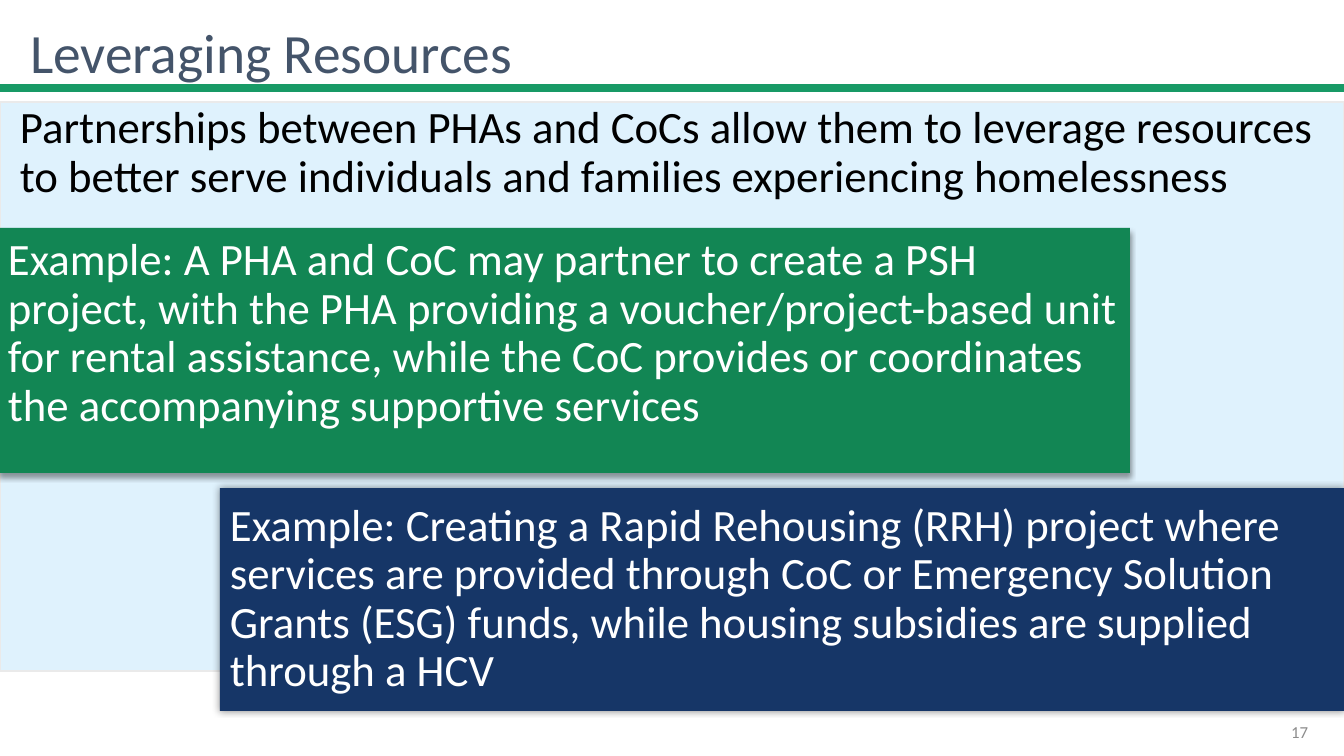
"""Builds the "Leveraging Resources" slide with two overlapping example panels."""
from lxml import etree
from pptx import Presentation
from pptx import util as u
from pptx.dml.color import RGBColor
from pptx.enum import shapes, text
from pptx.oxml.ns import qn

PX = 914400 / 100.8
FONT = "Calibri"
COLORS = {
    "rule": "189A66",
    "backdrop": "DFF2FD",
    "border": "EAEAEA",
    "green": "128654",
    "navy": "163667",
    "title": "44546A",
    "body": "000000",
    "white": "FFFFFF",
    "number": "8C8C8C",
}


def px(*lengths):
    return [u.Emu(round(length * PX)) for length in lengths]


def write(shape, words, size, color, anchor=text.MSO_ANCHOR.MIDDLE,
          align=text.PP_ALIGN.LEFT, spacing=0.9):
    frame = shape.text_frame
    frame.word_wrap = True
    frame.auto_size = text.MSO_AUTO_SIZE.NONE
    frame.vertical_anchor = anchor
    paragraph = frame.paragraphs[0]
    paragraph.alignment = align
    paragraph.line_spacing = spacing
    run = paragraph.add_run()
    run.text = words
    run.font.name = FONT
    run.font.size = u.Pt(size)
    run.font.color.rgb = RGBColor.from_string(COLORS[color])


presentation = Presentation()
presentation.slide_width, presentation.slide_height = px(1344, 756)
slide = presentation.slides.add_slide(presentation.slide_layouts[5])

rule = slide.shapes.add_connector(shapes.MSO_CONNECTOR.STRAIGHT, *px(0, 88, 1344, 88))
rule.line.color.rgb = RGBColor.from_string(COLORS["rule"])
rule.line.width = u.Pt(6)
etree.SubElement(rule._element.spPr, qn("a:effectLst"))

backdrop = slide.shapes.add_shape(shapes.MSO_SHAPE.RECTANGLE, *px(0, 102, 1344, 569))
backdrop.shadow.inherit = False
backdrop.fill.solid()
backdrop.fill.fore_color.rgb = RGBColor.from_string(COLORS["backdrop"])
backdrop.line.color.rgb = RGBColor.from_string(COLORS["border"])
backdrop.line.width = u.Pt(1)

title = slide.shapes.title
title.left, title.top, title.width, title.height = px(20, 21, 983, 70)
write(title, "Leveraging Resources", 39.6, "title")

panels = [
    ("green", (-2, 228, 1132, 245), 38, (4, 3, 90),
     "Example: A PHA and CoC may partner to create a PSH project, with the PHA "
     "providing a voucher/project-based unit for rental assistance, while the CoC "
     "provides or coordinates the accompanying supportive services"),
    ("navy", (220, 488, 1125, 223), 5, (5, 0, 0),
     "Example: Creating a Rapid Rehousing (RRH) project where services are provided "
     "through CoC or Emergency Solution Grants (ESG) funds, while housing subsidies "
     "are supplied through a HCV"),
]
for color, box, bottom_margin, (blur, distance, angle), words in panels:
    panel = slide.shapes.add_shape(shapes.MSO_SHAPE.RECTANGLE, *px(*box))
    panel.fill.solid()
    panel.fill.fore_color.rgb = RGBColor.from_string(COLORS[color])
    panel.line.fill.background()
    panel.shadow.inherit = False
    effects = panel._element.spPr.find(qn("a:effectLst"))
    shadow = etree.SubElement(
        effects, qn("a:outerShdw"), blurRad=str(u.Pt(blur)), dist=str(u.Pt(distance)),
        dir=str(angle * 60000), rotWithShape="0")
    shade = etree.SubElement(shadow, qn("a:srgbClr"), val="000000")
    etree.SubElement(shade, qn("a:alpha"), val="40000")
    panel.text_frame.margin_bottom, = px(bottom_margin)
    write(panel, words, 32, color="white")

body = slide.shapes.add_textbox(*px(10, 100, 1325, 117))
write(body, "Partnerships between PHAs and CoCs allow them to leverage resources to better "
      "serve individuals and families experiencing homelessness",
      32, "body", anchor=text.MSO_ANCHOR.TOP)

number = slide.shapes.add_textbox(*px(1016, 712, 302, 40))
write(number, "17", 12, "number", align=text.PP_ALIGN.RIGHT, spacing=1.0)

presentation.save("out.pptx")
